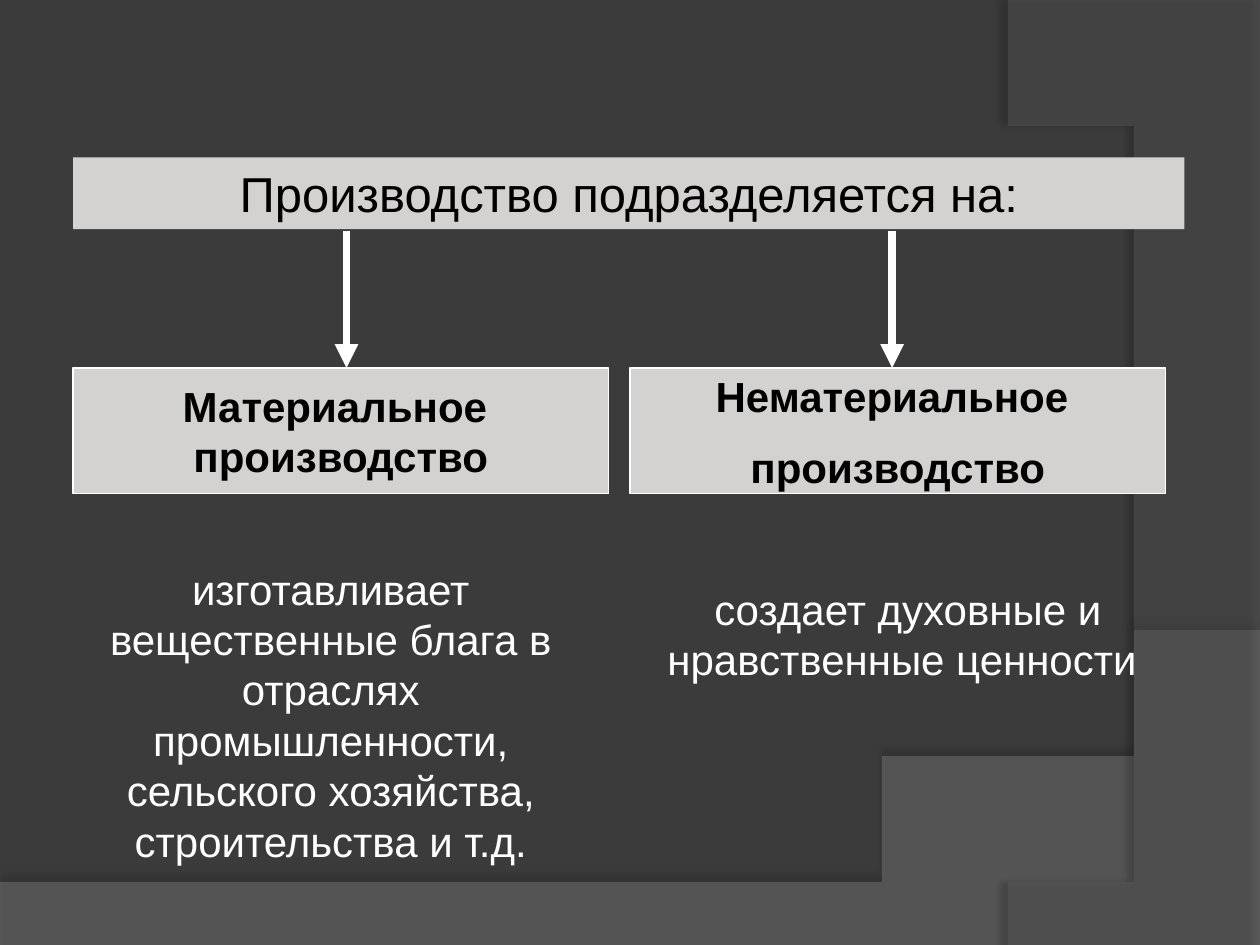
from lxml import etree
from pptx import Presentation
from pptx.dml.color import RGBColor
from pptx.enum.shapes import MSO_CONNECTOR, MSO_SHAPE
from pptx.enum.text import MSO_ANCHOR, PP_ALIGN
from pptx.oxml.ns import qn
from pptx.util import Inches, Pt

RECTANGLE = MSO_SHAPE.RECTANGLE
STRAIGHT = MSO_CONNECTOR.STRAIGHT
CENTER = PP_ALIGN.CENTER
TOP, MIDDLE = MSO_ANCHOR.TOP, MSO_ANCHOR.MIDDLE

FONT = "Arial"
BACKGROUND, PANEL, BLACK, WHITE = "3B3B3B", "D4D2D0", "000000", "FFFFFF"

HEADING = "Производство подразделяется на:"
HEADING_BOX = (0.58, 1.25, 8.82, 0.57)
BRANCH_TOP, BRANCH_WIDTH, BRANCH_HEIGHT = 2.92, 4.25, 1
ARROW_TOP = 1.83

BRANCHES = [
    {"name": ["Материальное ", "производство"], "left": 0.58, "gap": 0, "arrow_x": 2.75,
     "detail": "изготавливает вещественные блага в отраслях промышленности, "
               "сельского хозяйства, строительства и т.д.",
     "detail_box": (0.5, 4.42, BRANCH_WIDTH, 2.5)},
    {"name": ["Нематериальное ", "производство"], "left": 5, "gap": 12, "arrow_x": 7.08,
     "detail": "создает духовные и нравственные ценности ",
     "detail_box": (5.08, 4.58, BRANCH_WIDTH, 1.3)},
]

# Each wave: straight corners, then a Bezier curve from the last corner.
WAVES = [
    {"corners": [(0, 7.05), (0, 7.51), (10, 7.51), (10, 5.2)],
     "curve": [(5.59, 7.29), (3.91, 7.19), (0, 7.05)],
     "fill": "7F7F7F", "alpha": 45,
     "shadow": {"alpha": 35, "blur": 4, "distance": 3.5, "angle": 270}},
    {"corners": [(10, 0.02), (10, 7.5), (8.21, 7.5)],
     "curve": [(9.35, 6.19), (10.18, 3), (8, 0)],
     "fill": "5E5E5E", "alpha": 40,
     "shadow": {"alpha": 45, "blur": 4, "distance": 4, "angle": 180}},
]
CURVE_STEPS = 60


def rgb(color):
    return RGBColor.from_string(color)


def bezier(start, control1, control2, end):
    """Return points along a cubic Bezier curve, without its start."""
    points = []
    for step in range(1, CURVE_STEPS + 1):
        t = step / CURVE_STEPS
        weights = ((1 - t) ** 3, 3 * t * (1 - t) ** 2, 3 * t * t * (1 - t), t ** 3)
        points.append(tuple(
            sum(weight * value for weight, value in zip(weights, values))
            for values in zip(start, control1, control2, end)))
    return points


def set_alpha(color_element, percent):
    etree.SubElement(color_element, qn("a:alpha"), val=str(percent * 1000))


def add_wave(slide, wave):
    corners = wave["corners"]
    points = corners + bezier(corners[-1], *wave["curve"])
    builder = slide.shapes.build_freeform(*points[0], scale=Inches(1))
    builder.add_line_segments(points[1:], close=True)
    shape = builder.convert_to_shape()
    shape.fill.solid()
    shape.fill.fore_color.rgb = rgb(wave["fill"])
    shape.line.fill.background()
    properties = shape.element.spPr
    set_alpha(properties.find(qn("a:solidFill"))[0], wave["alpha"])

    shadow = wave["shadow"]
    effects = etree.SubElement(properties, qn("a:effectLst"))
    outer = etree.SubElement(
        effects, qn("a:outerShdw"), blurRad=str(Pt(shadow["blur"])),
        dist=str(Pt(shadow["distance"])), dir=str(shadow["angle"] * 60000),
        algn="ctr", rotWithShape="0")
    set_alpha(etree.SubElement(outer, qn("a:srgbClr"), val=BLACK), shadow["alpha"])


def write(shape, lines, size, color, bold=False, gap=0, anchor=TOP):
    frame = shape.text_frame
    frame.word_wrap = True
    frame.vertical_anchor = anchor
    frame.text = "\n".join(lines)
    for index, paragraph in enumerate(frame.paragraphs):
        paragraph.alignment = CENTER
        paragraph.space_before = Pt(gap if index else 0)
        font = paragraph.runs[0].font
        font.name, font.size, font.bold = FONT, Pt(size), bold
        font.color.rgb = rgb(color)


def add_panel(slide, box, outlined):
    panel = slide.shapes.add_shape(RECTANGLE, *map(Inches, box))
    panel.shadow.inherit = False
    panel.fill.solid()
    panel.fill.fore_color.rgb = rgb(PANEL)
    if outlined:
        panel.line.color.rgb = rgb(WHITE)
        panel.line.width = Pt(0.75)
    else:
        panel.line.fill.background()
    return panel


def add_arrow(slide, x):
    arrow = slide.shapes.add_connector(
        STRAIGHT, Inches(x), Inches(ARROW_TOP), Inches(x), Inches(BRANCH_TOP))
    arrow.line.color.rgb = rgb(WHITE)
    arrow.line.width = Pt(4.5)
    etree.SubElement(arrow.line._get_or_add_ln(), qn("a:tailEnd"), type="triangle")
    etree.SubElement(arrow.element.spPr, qn("a:effectLst"))


def main():
    presentation = Presentation()
    presentation.slide_width, presentation.slide_height = Inches(10), Inches(7.5)
    slide = presentation.slides.add_slide(presentation.slide_layouts.get_by_name("Blank"))
    slide.background.fill.solid()
    slide.background.fill.fore_color.rgb = rgb(BACKGROUND)

    for wave in WAVES:
        add_wave(slide, wave)

    write(add_panel(slide, HEADING_BOX, outlined=False), [HEADING], 28, BLACK)
    for branch in BRANCHES:
        box = (branch["left"], BRANCH_TOP, BRANCH_WIDTH, BRANCH_HEIGHT)
        write(add_panel(slide, box, outlined=True), branch["name"], 24, BLACK,
              bold=True, gap=branch["gap"], anchor=MIDDLE)
        detail = slide.shapes.add_textbox(*map(Inches, branch["detail_box"]))
        write(detail, [branch["detail"]], 24, WHITE)
        add_arrow(slide, branch["arrow_x"])

    presentation.save("out.pptx")


if __name__ == "__main__":
    main()
